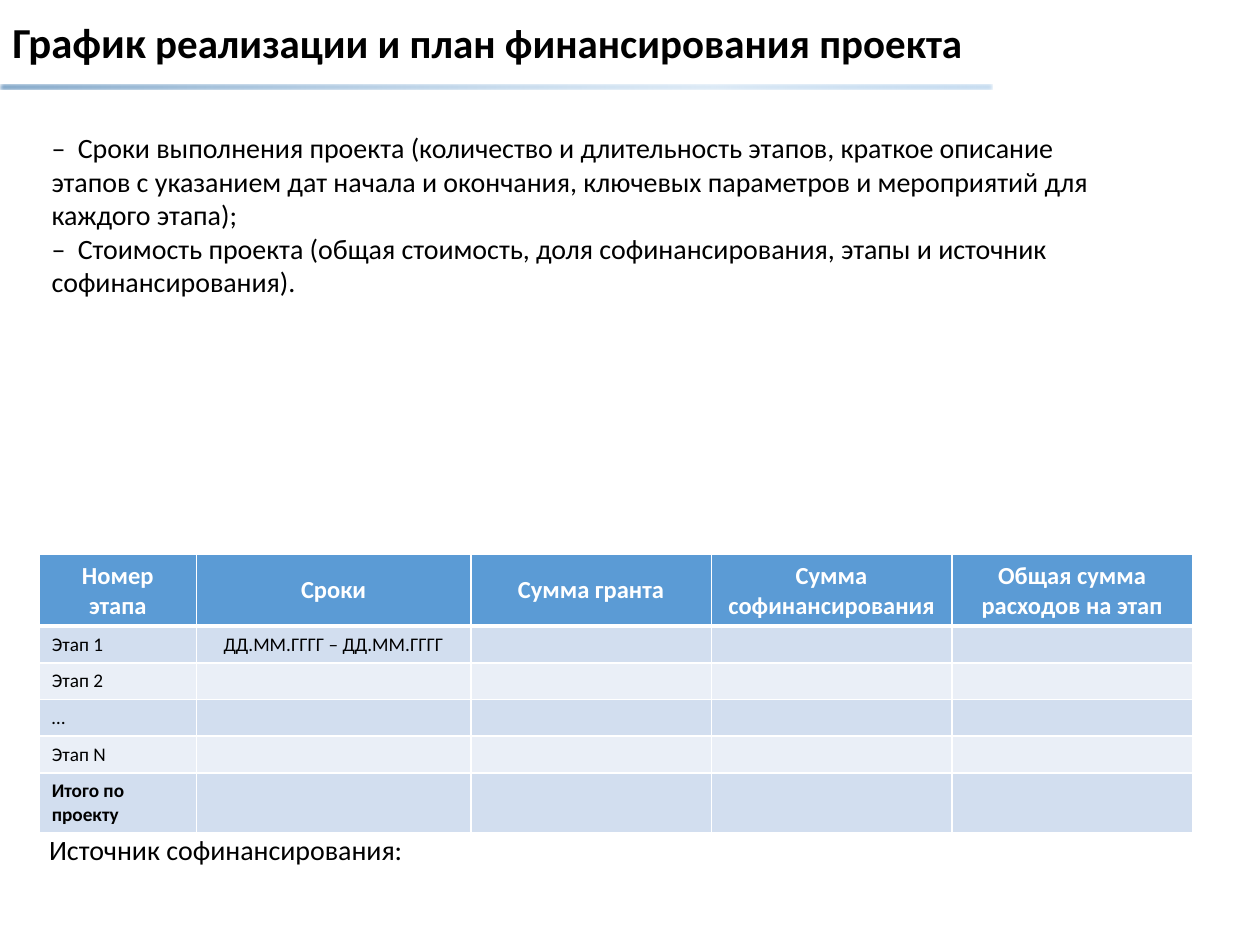
from pptx import Presentation
from pptx.dml.color import RGBColor
from pptx.enum.shapes import MSO_SHAPE
from pptx.enum.text import MSO_ANCHOR, PP_ALIGN
from pptx.oxml import parse_xml
from pptx.oxml.ns import nsdecls, qn
from pptx.util import Cm, Pt
from lxml import etree

ROUNDED = MSO_SHAPE.ROUNDED_RECTANGLE
MIDDLE, TOP = MSO_ANCHOR.MIDDLE, MSO_ANCHOR.TOP
LEFT, CENTER = PP_ALIGN.LEFT, PP_ALIGN.CENTER
FONT = "Calibri"
COLORS = {
    "text": "000000", "white": "FFFFFF", "header": "5B9BD5",
    "odd": "D2DEEF", "even": "EAEFF7",
    "rule_start": "2A69A2", "rule_middle": "66A2D8", "rule_end": "9DC3E6",
}
COLUMN_WIDTHS = [3.17, 5.53, 4.85, 4.85, 4.85]
ROW_HEIGHTS = [1.44, 0.74, 0.74, 0.74, 0.74, 1.2]
HEADERS = ["Номер этапа", "Сроки", "Сумма гранта",
           "Сумма софинансирования", "Общая сумма расходов на этап"]
STAGES = [["Этап 1", "ДД.ММ.ГГГГ – ДД.ММ.ГГГГ"], ["Этап 2"], ["…"],
          ["Этап N"], ["Итого по проекту"]]
POINTS = [
    "Сроки выполнения проекта (количество и длительность этапов, краткое описание "
    "этапов с указанием дат начала и окончания, ключевых параметров и мероприятий "
    "для каждого этапа);",
    "Стоимость проекта (общая стоимость, доля софинансирования, этапы и источник "
    "софинансирования).",
]


def add_span(para, text, size=16, color="text", bold=False):
    """Append formatted text to a paragraph."""
    span = para.add_run()
    span.text = text
    span.font.name = FONT
    span.font.size = Pt(size)
    span.font.bold = bold
    span.font.color.rgb = RGBColor.from_string(COLORS[color])


def add_box(page, left, top, width, height, anchor=TOP):
    """Add a wrapping text box and return its text frame."""
    frame = page.shapes.add_textbox(Cm(left), Cm(top), Cm(width), Cm(height)).text_frame
    frame.word_wrap = True
    frame.vertical_anchor = anchor
    return frame


def add_title(page):
    """Add the heading across the top of the page."""
    para = add_box(page, 0, 0, 25.4, 1.8, anchor=MIDDLE).paragraphs[0]
    para.line_spacing = 0.9
    add_span(para, "График", size=24.4, bold=True)
    add_span(para, " реализации и план финансирования проекта", size=23.4, bold=True)


def add_rule(page):
    """Add the fading, soft-edged bar under the heading."""
    bar = page.shapes.add_shape(ROUNDED, Cm(0), Cm(1.7), Cm(20), Cm(0.11))
    bar.shadow.inherit = False
    bar.line.fill.background()
    bar.fill.gradient()
    bar.fill.gradient_angle = 0
    stops = bar._element.spPr.find(qn("a:gradFill")).find(qn("a:gsLst"))
    for stop in list(stops):
        stops.remove(stop)
    for position, color, alpha in [(0, "rule_start", 100), (72, "rule_middle", 41),
                                   (100, "rule_end", 100)]:
        stops.append(parse_xml(
            f'<a:gs {nsdecls("a")} pos="{position * 1000}"><a:srgbClr val="{COLORS[color]}">'
            f'<a:alpha val="{alpha * 1000}"/></a:srgbClr></a:gs>'))
    effects = bar._element.spPr.find(qn("a:effectLst"))
    etree.SubElement(effects, qn("a:softEdge"), rad=str(Pt(1)))


def add_points(page):
    """Add the dashed points, with a tab stop after each dash."""
    frame = add_box(page, 0.79, 2.51, 21.92, 3.68)
    for index, point in enumerate(POINTS):
        para = frame.add_paragraph() if index else frame.paragraphs[0]
        add_span(para, f"–\t{point}")
        tabs = etree.SubElement(para._p.get_or_add_pPr(), qn("a:tabLst"))
        etree.SubElement(tabs, qn("a:tab"), pos=str(Cm(0.53)), algn="l")


def set_borders(cell, bottom):
    """Draw white cell borders with the given bottom width."""
    properties = cell._tc.get_or_add_tcPr()
    for index, (side, width) in enumerate([("L", 1), ("R", 1), ("T", 1), ("B", bottom)]):
        properties.insert(index, parse_xml(
            f'<a:ln{side} {nsdecls("a")} w="{Pt(width)}"><a:solidFill>'
            f'<a:srgbClr val="{COLORS["white"]}"/></a:solidFill></a:ln{side}>'))


def fill_cell(cell, text, fill, align=LEFT, border=1, **style):
    """Set the text, fill and borders of a table cell."""
    cell.fill.solid()
    cell.fill.fore_color.rgb = RGBColor.from_string(COLORS[fill])
    cell.vertical_anchor = MIDDLE
    set_borders(cell, border)
    para = cell.text_frame.paragraphs[0]
    para.alignment = align
    if text:
        add_span(para, text, **style)
    else:
        etree.SubElement(para._p, qn("a:endParaRPr"), sz="1100")


def add_schedule(page):
    """Add the table of stages, dates and sums."""
    table = page.shapes.add_table(
        len(ROW_HEIGHTS), len(COLUMN_WIDTHS), Cm(0.79), Cm(11.18),
        Cm(sum(COLUMN_WIDTHS)), Cm(sum(ROW_HEIGHTS))).table
    for column, width in zip(table.columns, COLUMN_WIDTHS):
        column.width = Cm(width)
    for row, height in zip(table.rows, ROW_HEIGHTS):
        row.height = Cm(height)
    for column, header in enumerate(HEADERS):
        fill_cell(table.cell(0, column), header, "header", align=CENTER, border=3,
                  size=14, color="white", bold=True)
    for row, stage in enumerate(STAGES, start=1):
        for column in range(len(HEADERS)):
            text = stage[column] if column < len(stage) else ""
            fill_cell(table.cell(row, column), text, "odd" if row % 2 else "even",
                      align=CENTER if column else LEFT, size=11, bold=row == len(STAGES))


def main():
    """Build the deck and save it."""
    deck = Presentation()
    deck.slide_width, deck.slide_height = Cm(25.4), Cm(19.05)
    page = deck.slides.add_slide(deck.slide_layouts[6])
    add_title(page)
    add_rule(page)
    add_schedule(page)
    add_points(page)
    source = add_box(page, 0.74, 16.66, 12.83, 0.94)
    add_span(source.paragraphs[0], "Источник софинансирования:")
    deck.save("out.pptx")


if __name__ == "__main__":
    main()
